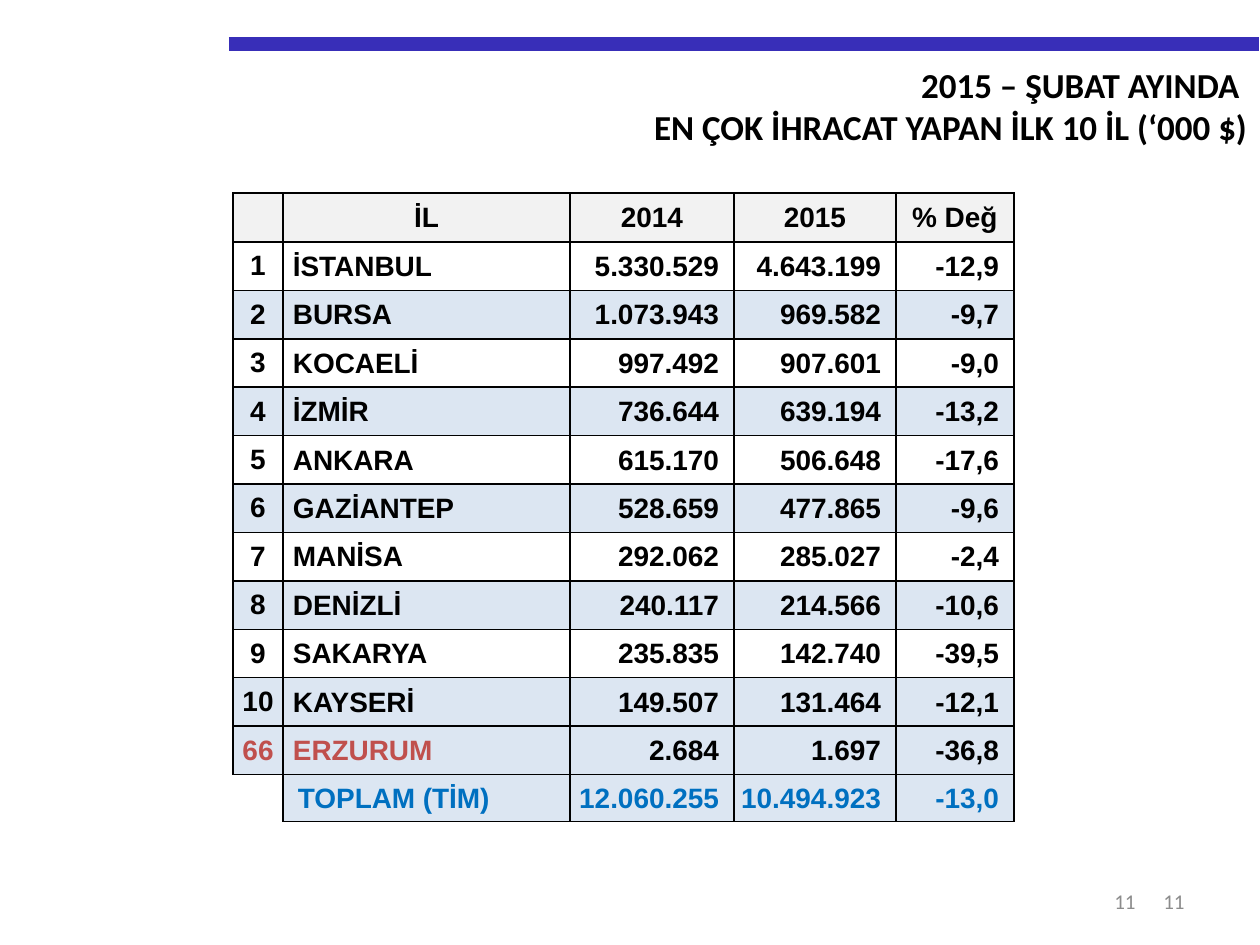
from lxml import etree
from pptx import Presentation
from pptx import util as u
from pptx.dml.color import RGBColor
from pptx.enum import shapes, text
from pptx.oxml.ns import qn

SCALE = 914400 / 126
HEX = {"bar": "382EB8", "ink": "000000", "gray": "8C8C8C", "head": "F2F2F2",
       "band": "DCE6F2", "red": "C0504D", "blue": "0070C0"}
LEFT, MID, RIGHT = text.PP_ALIGN.LEFT, text.PP_ALIGN.CENTER, text.PP_ALIGN.RIGHT
TITLE = ["2015 – ŞUBAT AYINDA ", "EN ÇOK İHRACAT YAPAN İLK 10 İL (‘000 $)"]
COLS = [50, 287, 164, 162, 118]
ROWS = [
    ["", "İL", "2014", "2015", "% Değ"],
    ["1", "İSTANBUL", "5.330.529", "4.643.199", "-12,9"],
    ["2", "BURSA", "1.073.943", "969.582", "-9,7"],
    ["3", "KOCAELİ", "997.492", "907.601", "-9,0"],
    ["4", "İZMİR", "736.644", "639.194", "-13,2"],
    ["5", "ANKARA", "615.170", "506.648", "-17,6"],
    ["6", "GAZİANTEP", "528.659", "477.865", "-9,6"],
    ["7", "MANİSA", "292.062", "285.027", "-2,4"],
    ["8", "DENİZLİ", "240.117", "214.566", "-10,6"],
    ["9", "SAKARYA", "235.835", "142.740", "-39,5"],
    ["10", "KAYSERİ", "149.507", "131.464", "-12,1"],
    ["66", "ERZURUM", "2.684", "1.697", "-36,8"],
    ["", "TOPLAM (TİM)", "12.060.255", "10.494.923", "-13,0"],
]
LAST = len(ROWS) - 1


def px(n):
    """Turn pixels into EMU."""
    return u.Emu(round(n * SCALE))


def rgb(name):
    """Look up a named colour."""
    return RGBColor.from_string(HEX[name])


def style(para, align, face, size, color, bold=False):
    """Set the alignment and font of a paragraph."""
    para.alignment = align
    font = para.font
    font.name, font.size, font.bold = face, u.Pt(size), bold
    font.color.rgb = rgb(color)


def add_text(slide, box, lines, size, color, bold=False, anchor=text.MSO_ANCHOR.TOP):
    """Place right-aligned lines of text in a box."""
    frame = slide.shapes.add_textbox(*map(px, box)).text_frame
    frame.word_wrap = True
    frame.vertical_anchor = anchor
    frame.text = "\n".join(lines)
    for para in frame.paragraphs:
        style(para, RIGHT, "Calibri", size, color, bold)


def add_bar(slide, box):
    """Draw the thick line across the top."""
    x, y, w, h = box
    bar = slide.shapes.add_connector(
        shapes.MSO_CONNECTOR.STRAIGHT, px(x), px(y), px(x + w), px(y + h))
    bar.line.color.rgb = rgb("bar")
    bar.line.width = u.Pt(8.5)
    etree.SubElement(bar._element.spPr, qn("a:effectLst"))


def set_edges(cell, sides):
    """Draw black borders on the given sides and clear the others."""
    props = cell._tc.get_or_add_tcPr()
    for i, side in enumerate("LRTB"):
        line = etree.Element(qn(f"a:ln{side}"), w=str(u.Pt(1)))
        if side in sides:
            fill = etree.SubElement(line, qn("a:solidFill"))
            etree.SubElement(fill, qn("a:srgbClr"), val=HEX["ink"])
        else:
            etree.SubElement(line, qn("a:noFill"))
        props.insert(i, line)


def get_look(row, col):
    """Give the alignment, insets and text colour of a cell."""
    if row == 0 and col:
        return MID, (12, 6, 12, 6), "ink"
    if col == 0:
        align, pads = MID, (0, 0, 0, 0)
    elif col == 1:
        align, pads = LEFT, (15 if row == LAST else 10, 1, 1, 0)
    else:
        align, pads = RIGHT, (1, 1, 15, 0)
    if row == LAST:
        return align, pads, "blue"
    return align, pads, "red" if row == LAST - 1 and col < 2 else "ink"


def fill_cell(cell, row, col):
    """Write and format one table cell."""
    align, pads, color = get_look(row, col)
    cell.margin_left, cell.margin_top, cell.margin_right, cell.margin_bottom = map(px, pads)
    cell.vertical_anchor = text.MSO_ANCHOR.MIDDLE
    cell.text = ROWS[row][col]
    style(cell.text_frame.paragraphs[0], align, "Arial", 16, color, True)
    corner = row == LAST and col == 0
    if not corner and (row % 2 == 0 or row >= LAST - 1):
        cell.fill.solid()
        cell.fill.fore_color.rgb = rgb("band" if row else "head")
    else:
        cell.fill.background()
    set_edges(cell, "RT" if corner else "LRTB")


def add_grid(slide, box):
    """Build the table of provinces."""
    table = slide.shapes.add_table(len(ROWS), len(COLS), *map(px, box)).table
    table.first_row = table.horz_banding = False
    for col, width in zip(table.columns, COLS):
        col.width = px(width)
    head, foot = 49, 47
    for row in table.rows:
        row.height = px((box[3] - head - foot) / (len(ROWS) - 2))
    table.rows[0].height, table.rows[LAST].height = px(head), px(foot)
    for r in range(len(ROWS)):
        for c in range(len(COLS)):
            fill_cell(table.cell(r, c), r, c)


def main():
    """Build the slide and save it."""
    deck = Presentation()
    deck.slide_width, deck.slide_height = px(1260), px(945)
    slide = deck.slides.add_slide(deck.slide_layouts[6])
    add_bar(slide, (229, 44, 1030, 0))
    for box in [(903, 876, 294, 50), (883, 876, 265, 50)]:
        add_text(slide, box, ["11"], 12, "gray", anchor=text.MSO_ANCHOR.MIDDLE)
    add_text(slide, (134, 57, 1126, 97), TITLE, 20, "ink", True)
    add_grid(slide, (233, 193, sum(COLS), 629))
    deck.save("out.pptx")


if __name__ == "__main__":
    main()
